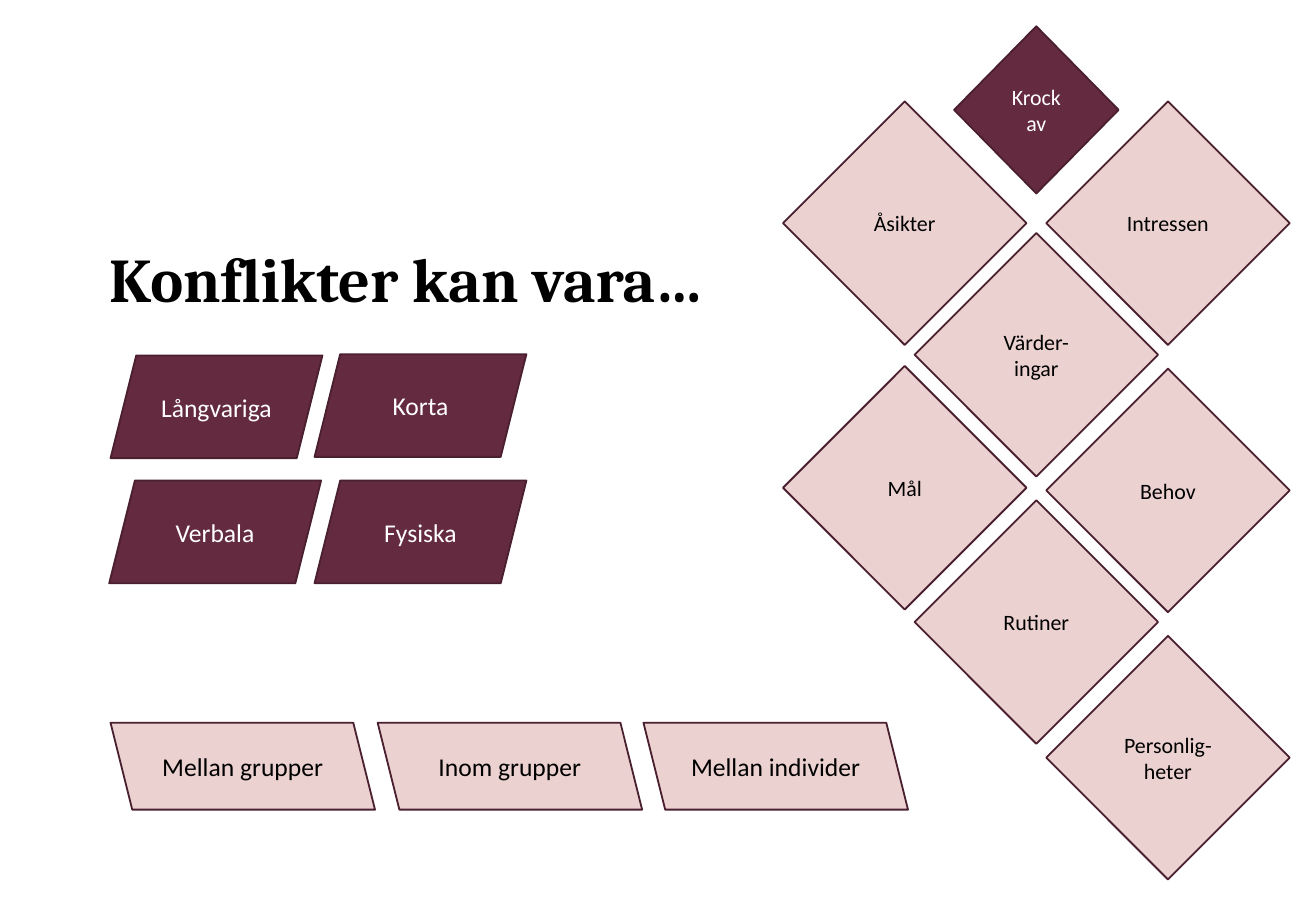
"""Builds a slide on kinds of conflicts and the clashes behind them."""
from pptx import Presentation
from pptx.dml.color import RGBColor
from pptx.enum.shapes import MSO_SHAPE as Shape
from pptx.enum.text import MSO_ANCHOR as Anchor, PP_ALIGN as Align
from pptx.util import Pt

PX = 9144
WINE = RGBColor(0x64, 0x2A, 0x3F)
DARK_WINE = RGBColor(0x4A, 0x1F, 0x2F)
ROSE = RGBColor(0xEB, 0xD2, 0xD0)
WHITE = RGBColor(0xFF, 0xFF, 0xFF)
BLACK = RGBColor(0x00, 0x00, 0x00)


def set_font(paragraph, name, size, color):
    paragraph.font.name = name
    paragraph.font.size = Pt(size)
    paragraph.font.color.rgb = color


def add_tile(kind, text, left, top, width, height, size, fill, color):
    shape = slide.shapes.add_shape(kind, left * PX, top * PX, width * PX, height * PX)
    shape.shadow.inherit = False
    shape.fill.solid()
    shape.fill.fore_color.rgb = fill
    shape.line.color.rgb = DARK_WINE
    shape.line.width = Pt(1)
    frame = shape.text_frame
    frame.word_wrap = True
    frame.vertical_anchor = Anchor.MIDDLE
    paragraph = frame.paragraphs[0]
    paragraph.text = text
    paragraph.alignment = Align.CENTER
    set_font(paragraph, "Calibri", size, color)
    return shape


presentation = Presentation()
presentation.slide_width = 1000 * PX
presentation.slide_height = 695 * PX
slide = presentation.slides.add_slide(presentation.slide_layouts[5])

title = slide.shapes.title
title.left, title.top, title.width, title.height = 83 * PX, 84 * PX, 835 * PX, 156 * PX
frame = title.text_frame
frame.margin_left = frame.margin_top = frame.margin_right = frame.margin_bottom = 0
frame.word_wrap = True
frame.vertical_anchor = Anchor.BOTTOM
paragraph = frame.paragraphs[0]
paragraph.text = "Konflikter kan vara…"
paragraph.alignment = Align.LEFT
paragraph.line_spacing = 0.9
set_font(paragraph, "Cambria", 34, BLACK)
paragraph.font.bold = True

conflict_types = [
    ("Långvariga", 84, 270),
    ("Korta", 239, 269),
    ("Verbala", 83, 365),
    ("Fysiska", 239, 365),
]
for text, left, top in conflict_types:
    add_tile(Shape.PARALLELOGRAM, text, left, top, 161, 78, 14, WINE, WHITE)

parties = [("Mellan grupper", 84), ("Inom grupper", 287), ("Mellan individer", 489)]
for text, left in parties:
    tile = add_tile(Shape.PARALLELOGRAM, text, left, 549, 201, 66, 14, ROSE, BLACK)
    tile._element.spPr.xfrm.set("flipH", "1")

add_tile(Shape.DIAMOND, "Krock av", 725, 20, 125, 127, 12, WINE, WHITE)
clashes = [
    ("Åsikter", 0, 77),
    ("Intressen", 2, 77),
    ("Värder-ingar", 1, 177),
    ("Mål", 0, 278),
    ("Behov", 2, 280),
    ("Rutiner", 1, 380),
    ("Personlig-heter", 2, 483),
]
for text, column, top in clashes:
    add_tile(Shape.DIAMOND, text, 595 + 100 * column, top, 185, 185, 12, ROSE, BLACK)

presentation.save("out.pptx")
